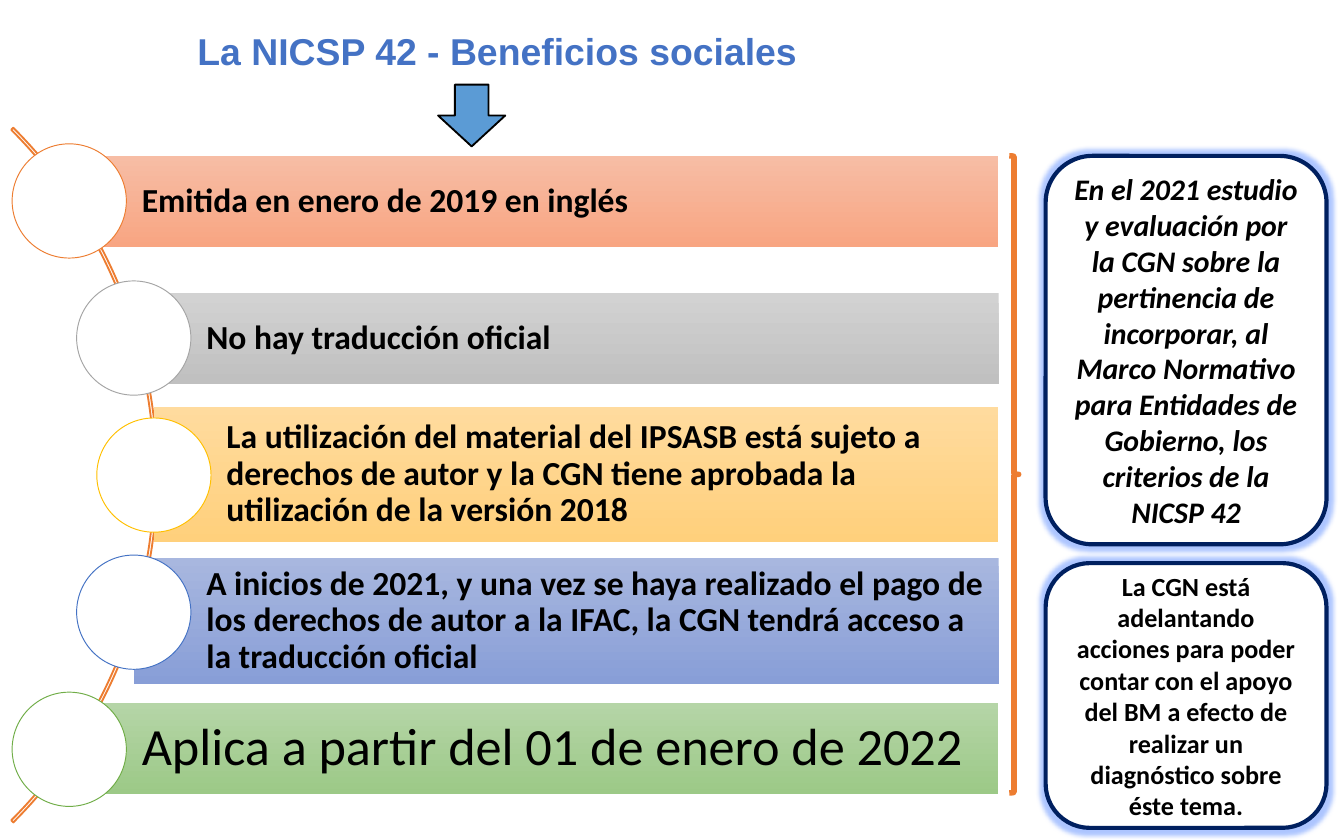
"""Build the slide on NICSP 42 and social benefits."""
from lxml import etree
from pptx import Presentation
from pptx import util as u
from pptx.dml.color import RGBColor
from pptx.enum import shapes, text
from pptx.oxml.ns import qn

BLACK = RGBColor(0x00, 0x00, 0x00)
WHITE = RGBColor(0xFF, 0xFF, 0xFF)
NAVY = RGBColor(0x00, 0x20, 0x60)
BLUE = RGBColor(0x44, 0x72, 0xC4)
SKY = RGBColor(0x5B, 0x9B, 0xD5)
ORANGE = RGBColor(0xED, 0x7D, 0x31)
GRAY = RGBColor(0xA5, 0xA5, 0xA5)
GOLD = RGBColor(0xFF, 0xC0, 0x00)
GREEN = RGBColor(0x70, 0xAD, 0x47)
ORANGE_TINTS = RGBColor(0xF7, 0xBD, 0xA5), RGBColor(0xF8, 0xA5, 0x82)
GRAY_TINTS = RGBColor(0xD2, 0xD2, 0xD2), RGBColor(0xC0, 0xC0, 0xC0)
GOLD_TINTS = RGBColor(0xFF, 0xDB, 0x9E), RGBColor(0xFF, 0xD0, 0x7C)
BLUE_TINTS = RGBColor(0xA8, 0xB7, 0xDF), RGBColor(0x88, 0x9E, 0xD7)
GREEN_TINTS = RGBColor(0xB5, 0xD5, 0xA7), RGBColor(0x9C, 0xC9, 0x87)
GLOW = RGBColor(0x33, 0x70, 0xFF)

presentation = Presentation()
presentation.slide_width = u.Inches(10)
presentation.slide_height = u.Inches(6.25)
slide = presentation.slides.add_slide(presentation.slide_layouts[6])


def draw(kind, box, fill=None, line=None, width=1):
    shape = slide.shapes.add_shape(kind, *map(u.Inches, box))
    shape.shadow.inherit = False
    if fill is None:
        shape.fill.background()
    else:
        shape.fill.solid()
        shape.fill.fore_color.rgb = fill
    if line is None:
        shape.line.fill.background()
    else:
        shape.line.color.rgb = line
        shape.line.width = u.Pt(width)
    return shape


def write(shape, words, size, align, spacing=1.0, color=BLACK, bold=True, italic=False, face="Calibri"):
    frame = shape.text_frame
    frame.word_wrap = True
    frame.vertical_anchor = text.MSO_ANCHOR.MIDDLE
    frame.text = words
    paragraph = frame.paragraphs[0]
    paragraph.alignment = align
    paragraph.line_spacing = spacing
    font = paragraph.runs[0].font
    font.name, font.size, font.bold, font.italic = face, u.Pt(size), bold, italic
    font.color.rgb = color


LEFT, CENTER = text.PP_ALIGN.LEFT, text.PP_ALIGN.CENTER
KIND = shapes.MSO_SHAPE

arc = draw(KIND.BLOCK_ARC, (-6.14, -0.12, 7.31, 7.31), line=ORANGE)
for index, value in enumerate((189, 27, 0.003)):
    arc.adjustments[index] = value

CIRCLE = 0.85
CIRCLE_TOP = 1.07
STEP = 1.02
BAR_RIGHT = 7.43
milestones = [
    ("Emitida en enero de 2019 en inglés", 0.09, 1.16, 0.68, ORANGE, ORANGE_TINTS, 18, True),
    ("No hay traducción oficial", 0.57, 2.18, 0.68, GRAY, GRAY_TINTS, 18, True),
    ("La utilización del material del IPSASB está sujeto a derechos de autor y la CGN tiene "
     "aprobada la utilización de la versión 2018", 0.72, 3.03, 1, GOLD, GOLD_TINTS, 18, True),
    ("A inicios de 2021, y una vez se haya realizado el pago de los derechos de autor a la IFAC, "
     "la CGN tendrá acceso a la traducción oficial", 0.57, 4.15, 0.94, BLUE, BLUE_TINTS, 18, True),
    ("Aplica a partir del 01 de enero de 2022", 0.09, 5.23, 0.68, GREEN, GREEN_TINTS, 28, False),
]
for row, (words, left, top, height, accent, tints, size, bold) in enumerate(milestones):
    bar_left = left + CIRCLE / 2
    bar = draw(KIND.RECTANGLE, (bar_left, top, BAR_RIGHT - bar_left, height))
    bar.fill.gradient()
    bar.fill.gradient_angle = 270
    for stop, tint in zip(bar.fill.gradient_stops, tints):
        stop.color.rgb = tint
    write(bar, words, size, LEFT, spacing=0.9, bold=bold)
    bar.text_frame.margin_left = u.Inches(0.54)
    bar.text_frame.margin_right = u.Inches(0.05)
    draw(KIND.OVAL, (left, CIRCLE_TOP + row * STEP, CIRCLE, CIRCLE), WHITE, accent, 0.5)

title = slide.shapes.add_textbox(*map(u.Inches, (1.37, 0.08, 5.95, 0.64)))
write(title, "La NICSP 42 - Beneficios sociales", 20, LEFT, spacing=0.9, color=BLUE, face="Arial")

draw(KIND.RIGHT_BRACE, (7.51, 1.16, 0.07, 4.74), line=ORANGE, width=3)
draw(KIND.DOWN_ARROW, (3.26, 0.63, 0.5, 0.46), SKY, BLACK)

conclusions = [
    ("En el 2021 estudio y evaluación por la CGN sobre la pertinencia de incorporar, al Marco "
     "Normativo para Entidades de Gobierno, los criterios de la NICSP 42", 1.16, 2.89, 16, True),
    ("La CGN está adelantando acciones para poder contar con el apoyo del BM a efecto de realizar "
     "un diagnóstico sobre éste tema.", 4.19, 1.97, 14, False),
]
for words, top, height, size, italic in conclusions:
    conclusion = draw(KIND.ROUNDED_RECTANGLE, (7.78, top, 2.09, height), WHITE, NAVY, 2.25)
    write(conclusion, words, size, CENTER, italic=italic)
    effects = conclusion.element.spPr.find(qn("a:effectLst"))
    glow = etree.SubElement(effects, qn("a:glow"), rad=str(u.Pt(5)))
    tone = etree.SubElement(glow, qn("a:srgbClr"), val=str(GLOW))
    etree.SubElement(tone, qn("a:alpha"), val="40000")

presentation.save("out.pptx")
